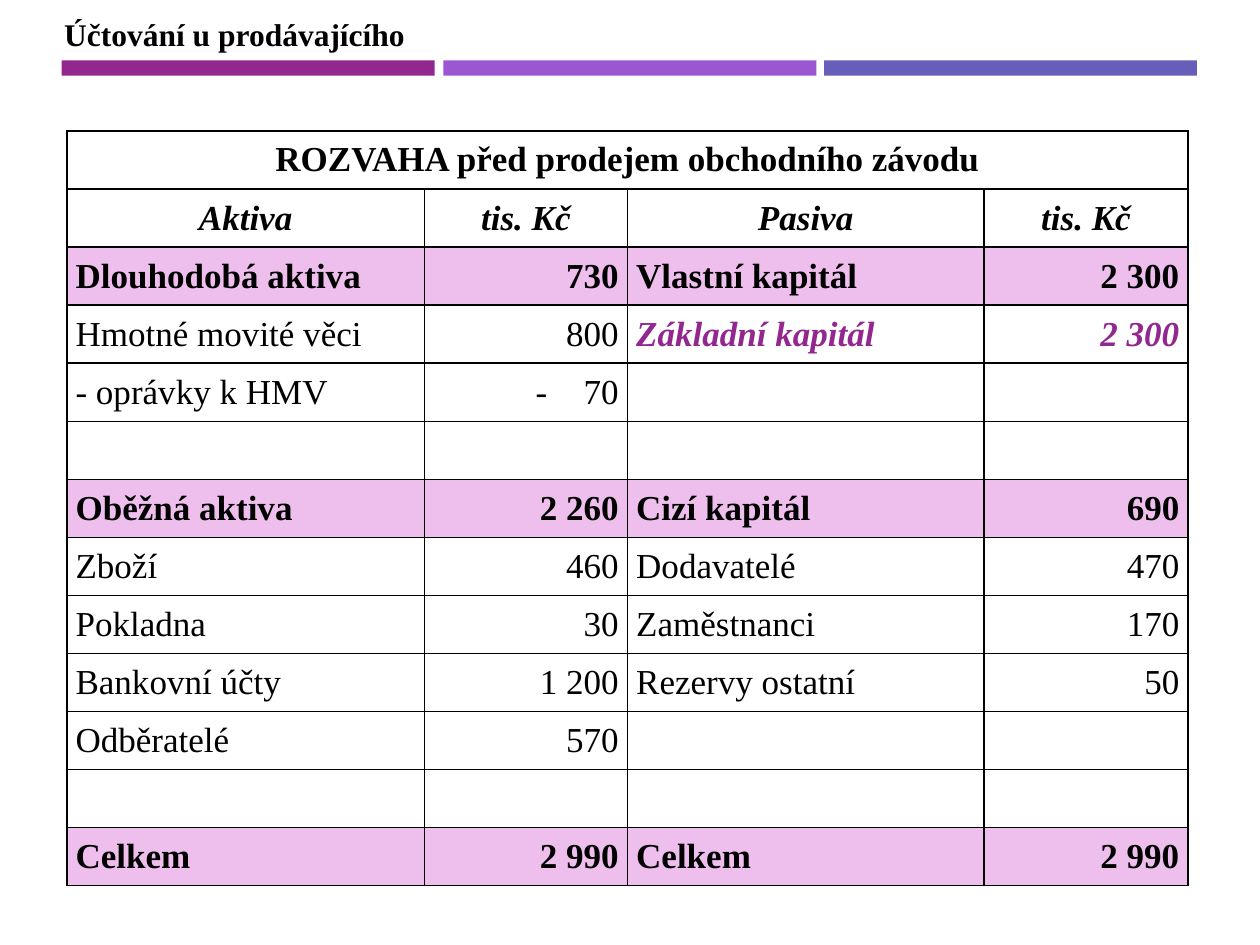
from dataclasses import dataclass

import pptx
import pptx.dml.color
import pptx.enum.shapes
import pptx.enum.text
import pptx.oxml
import pptx.oxml.ns
import pptx.util
from lxml import etree

Inches = pptx.util.Inches
Pt = pptx.util.Pt
RGBColor = pptx.dml.color.RGBColor
Align = pptx.enum.text.PP_ALIGN
Anchor = pptx.enum.text.MSO_ANCHOR
qn = pptx.oxml.ns.qn

FONT = "Times New Roman"
BLACK = RGBColor(0x00, 0x00, 0x00)
PURPLE = RGBColor(0x92, 0x27, 0x8F)
VIOLET = RGBColor(0x9B, 0x57, 0xD3)
BLUE = RGBColor(0x66, 0x5E, 0xB8)
PINK = RGBColor(0xEE, 0xBF, 0xED)

COL_WIDTHS = (2.84, 1.61, 2.83, 1.62)
TABLE_HEIGHT = 5.99
BODY_ALIGN = (Align.LEFT, Align.RIGHT, Align.JUSTIFY, Align.RIGHT)


@dataclass(frozen=True)
class Bar:
    left: float
    color: RGBColor


@dataclass(frozen=True)
class Style:
    bold: bool = False
    italic: bool = False
    color: RGBColor = BLACK


@dataclass(frozen=True)
class Row:
    texts: tuple[str, str, str, str] = ("", "", "", "")
    left: Style = Style()
    right: Style = Style()
    shaded: bool = False
    centered: bool = False
    dash_amount: bool = False


BOLD = Style(bold=True)
HEADING = Style(bold=True, italic=True)
EQUITY = Style(bold=True, italic=True, color=PURPLE)

BARS = (Bar(0.49, PURPLE), Bar(3.52, VIOLET), Bar(6.54, BLUE))


def total(*texts: str) -> Row:
    return Row(texts, BOLD, BOLD, shaded=True)


ROWS = (
    Row(("ROZVAHA před prodejem obchodního závodu", "", "", ""), BOLD, BOLD, centered=True),
    Row(("Aktiva", "tis. Kč", "Pasiva", "tis. Kč"), HEADING, HEADING, centered=True),
    total("Dlouhodobá aktiva", "730", "Vlastní kapitál", "2 300"),
    Row(("Hmotné movité věci", "800", "Základní kapitál", "2 300"), right=EQUITY),
    Row(("- oprávky k HMV", "70", "", ""), dash_amount=True),
    Row(),
    total("Oběžná aktiva", "2 260", "Cizí kapitál", "690"),
    Row(("Zboží", "460", "Dodavatelé", "470")),
    Row(("Pokladna", "30", "Zaměstnanci", "170")),
    Row(("Bankovní účty", "1 200", "Rezervy ostatní", "50")),
    Row(("Odběratelé", "570", "", "")),
    Row(),
    total("Celkem", "2 990", "Celkem", "2 990"),
)


def set_font(p, size: float, style: Style) -> None:
    p.font.name = FONT
    p.font.size = Pt(size)
    p.font.bold = style.bold
    p.font.italic = style.italic
    p.font.color.rgb = style.color


def add_bar(slide, bar: Bar) -> None:
    sp = slide.shapes.add_shape(
        pptx.enum.shapes.MSO_SHAPE.RECTANGLE,
        Inches(bar.left), Inches(0.48), Inches(2.96), Inches(0.12))
    sp.shadow.inherit = False
    sp.fill.solid()
    sp.fill.fore_color.rgb = bar.color
    sp.line.fill.background()


def format_title(title) -> None:
    title.left, title.top = Inches(0.41), Inches(0.07)
    title.width, title.height = Inches(2.93), Inches(0.4)
    tf = title.text_frame
    tf.text = "Účtování u prodávajícího"
    tf.word_wrap = False
    tf.auto_size = pptx.enum.text.MSO_AUTO_SIZE.SHAPE_TO_FIT_TEXT
    tf.vertical_anchor = Anchor.TOP
    p = tf.paragraphs[0]
    p.alignment = Align.LEFT
    set_font(p, 18, BOLD)


def add_borders(cell) -> None:
    tc_pr = cell._tc.get_or_add_tcPr()
    for side in ("a:lnL", "a:lnR", "a:lnT", "a:lnB"):
        ln = etree.SubElement(tc_pr, qn(side), w=str(Pt(1)))
        fill = etree.SubElement(ln, qn("a:solidFill"))
        etree.SubElement(fill, qn("a:srgbClr"), val=str(BLACK))


def add_dash(p) -> None:
    """Give the paragraph a hanging dash bullet."""
    p_pr = p._p.get_or_add_pPr()
    p_pr.set("marL", str(Inches(0.38)))
    p_pr.set("indent", str(-Inches(0.38)))
    etree.SubElement(p_pr, qn("a:buFont"), typeface=FONT)
    etree.SubElement(p_pr, qn("a:buChar"), char="-")


def fill_cell(cell, row: Row, col: int) -> None:
    cell.margin_left = cell.margin_right = Inches(0.07)
    cell.margin_top = cell.margin_bottom = 0
    cell.vertical_anchor = Anchor.MIDDLE
    add_borders(cell)
    if row.shaded:
        cell.fill.solid()
        cell.fill.fore_color.rgb = PINK
    else:
        cell.fill.background()
    cell.text = row.texts[col]
    p = cell.text_frame.paragraphs[0]
    p.alignment = Align.CENTER if row.centered else BODY_ALIGN[col]
    if row.dash_amount and col == 1:
        add_dash(p)
    set_font(p, 20, row.left if col < 2 else row.right)


def add_balance_sheet(slide) -> None:
    table = slide.shapes.add_table(
        len(ROWS), len(COL_WIDTHS), Inches(0.53), Inches(1.04),
        Inches(sum(COL_WIDTHS)), Inches(TABLE_HEIGHT)).table
    table.first_row = table.horz_banding = False
    for column, width in zip(table.columns, COL_WIDTHS):
        column.width = Inches(width)
    for r, row in enumerate(ROWS):
        table.rows[r].height = Inches(TABLE_HEIGHT / len(ROWS))
        for c in range(len(COL_WIDTHS)):
            fill_cell(table.cell(r, c), row, c)
    table.cell(0, 0).merge(table.cell(0, len(COL_WIDTHS) - 1))


def main() -> None:
    prs = pptx.Presentation()
    prs.slide_width, prs.slide_height = Inches(10), Inches(7.5)
    slide = prs.slides.add_slide(prs.slide_layouts[5])
    for bar in BARS:
        add_bar(slide, bar)
    format_title(slide.shapes.title)
    add_balance_sheet(slide)
    prs.save("out.pptx")


if __name__ == "__main__":
    main()
